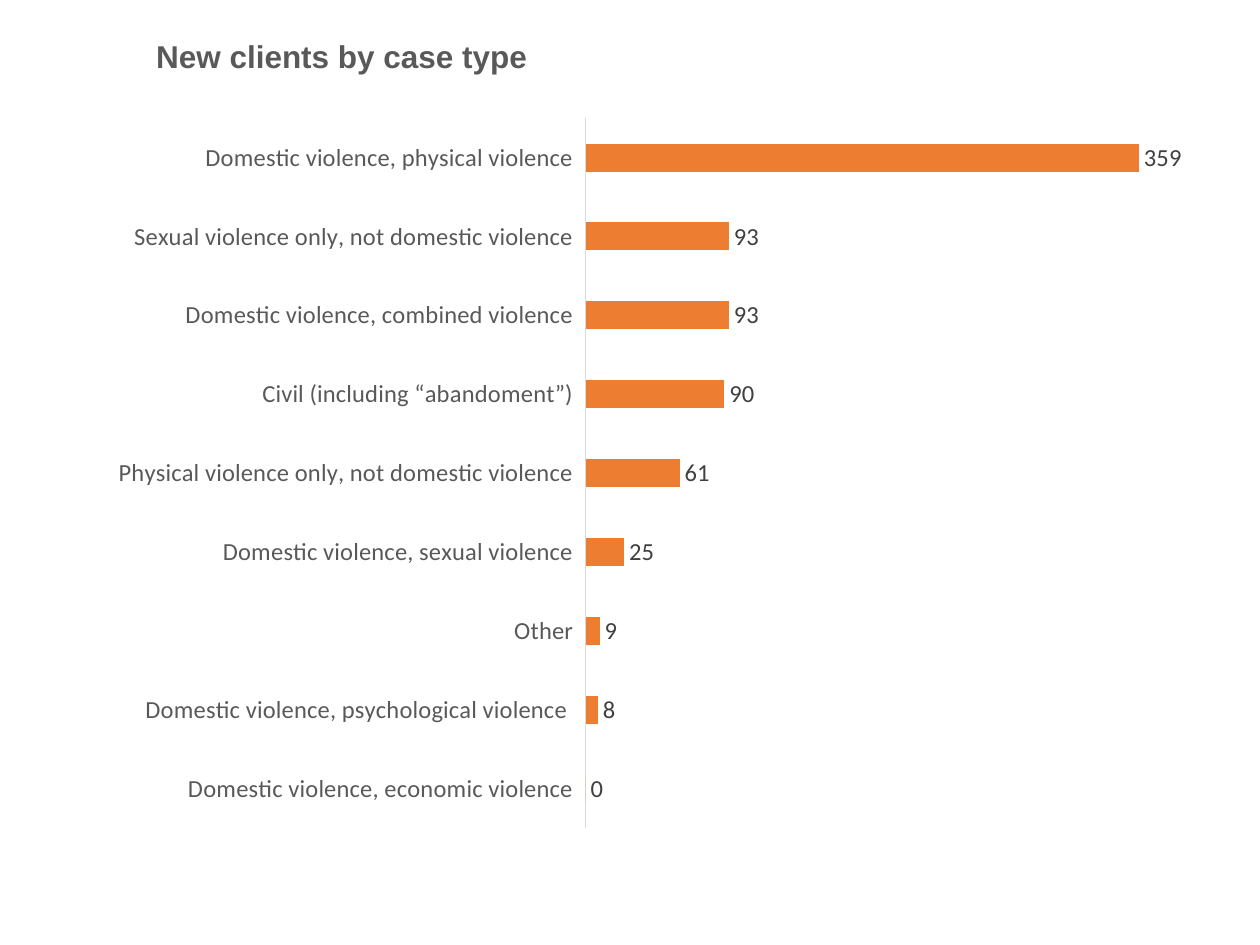
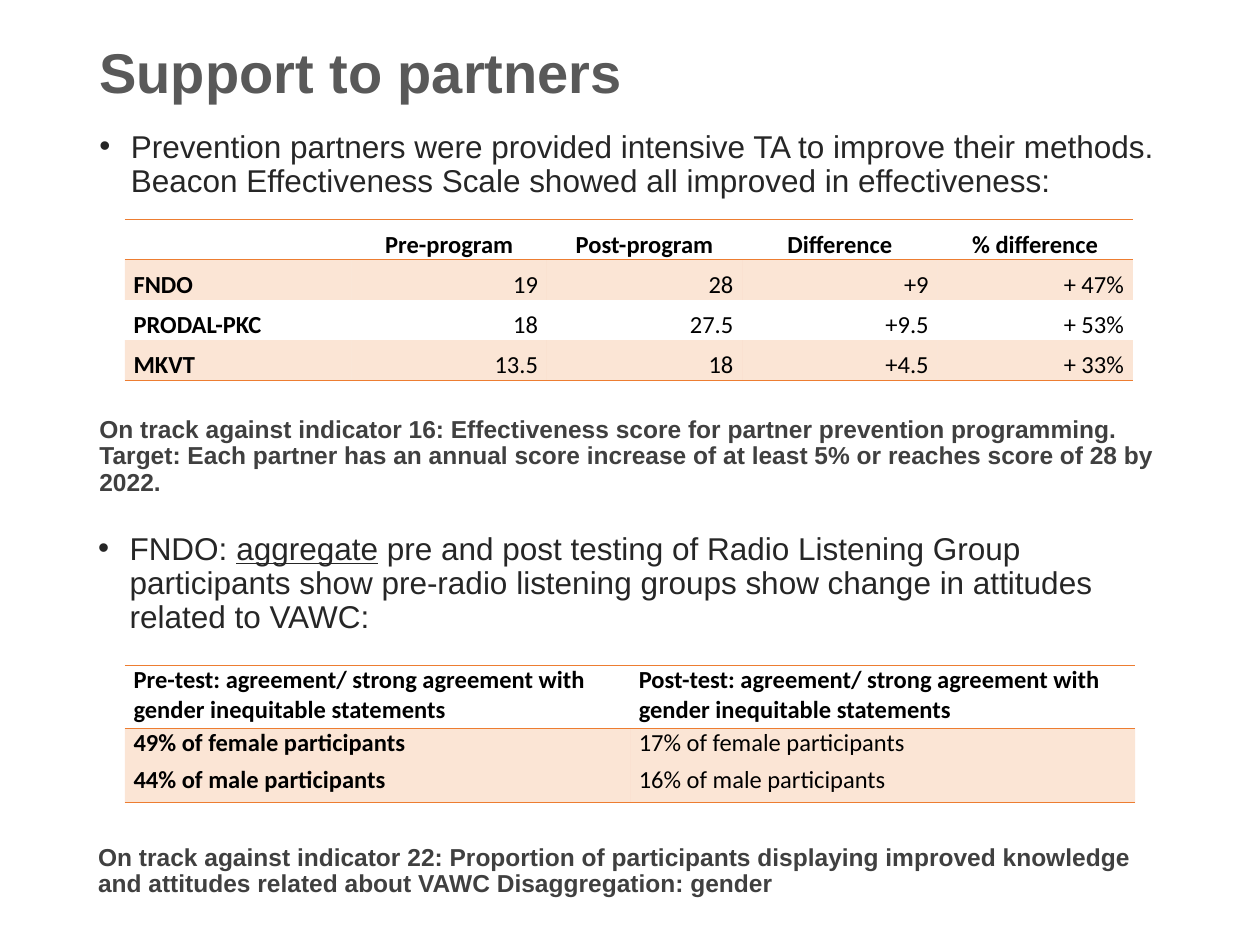
from dataclasses import dataclass

from lxml import etree
from pptx import Presentation
from pptx.chart.data import CategoryChartData
from pptx.dml.color import RGBColor
from pptx.enum.chart import XL_CHART_TYPE, XL_LABEL_POSITION, XL_TICK_LABEL_POSITION, XL_TICK_MARK
from pptx.enum.text import MSO_ANCHOR, PP_ALIGN
from pptx.oxml import parse_xml
from pptx.oxml.ns import nsdecls, qn
from pptx.util import Pt

BAR = XL_CHART_TYPE.BAR_CLUSTERED
OUTSIDE_END = XL_LABEL_POSITION.OUTSIDE_END
LOW = XL_TICK_LABEL_POSITION.LOW
NO_TICK = XL_TICK_MARK.NONE
TOP, MIDDLE, BOTTOM = MSO_ANCHOR.TOP, MSO_ANCHOR.MIDDLE, MSO_ANCHOR.BOTTOM
LEFT, CENTER, RIGHT, JUSTIFY = PP_ALIGN.LEFT, PP_ALIGN.CENTER, PP_ALIGN.RIGHT, PP_ALIGN.JUSTIFY

EMU_PER_PX = 9144  # 100 px to the inch
PAGE_SIZE = (1000, 750)
COLORS = {
    "title": "595959",
    "body": "262626",
    "note": "404040",
    "table": "000000",
    "accent": "ED7D31",
    "axis": "D9D9D9",
}
HEADING_FONT, DATA_FONT = "Arial", "Calibri"
DATA_SIZE = 14
PLAIN_TABLE_STYLE = "{2D5ABB26-0587-4C30-8999-92F81FD0307C}"
BULLET_INDENT = 25
CELL_INSET = 7
TINT_PERCENT = 20

CASES = {
    "Domestic violence, economic violence": 0,
    "Domestic violence, psychological violence ": 8,
    "Other": 9,
    "Domestic violence, sexual violence": 25,
    "Physical violence only, not domestic violence": 61,
    "Civil (including “abandoment”)": 90,
    "Domestic violence, combined violence": 93,
    "Sexual violence only, not domestic violence": 93,
    "Domestic violence, physical violence": 359,
}


@dataclass(frozen=True)
class Box:
    left: int
    top: int
    width: int
    height: int

    def emu(self) -> list[int]:
        return [px(side) for side in (self.left, self.top, self.width, self.height)]


@dataclass(frozen=True)
class Finding:
    """A bullet, and a note that stands a gap (in points) below it."""
    box: Box
    spans: tuple[str, ...]
    note: str
    gap: float


@dataclass(frozen=True)
class Grid:
    box: Box
    columns: tuple[int, ...]
    row_heights: tuple[int, ...]
    rows: tuple[tuple[str, ...], ...]
    header_align: int
    value_align: int
    anchor: int
    line_spacing: float = 1.0
    padding: int = 0


FINDINGS = (
    Finding(
        Box(69, 99, 862, 304),
        ("Prevention partners were provided intensive TA to improve their methods. "
         "Beacon Effectiveness Scale showed all improved in effectiveness:",),
        "On track against indicator 16: Effectiveness score for partner prevention "
        "programming. Target: Each partner has an annual score increase of at least 5% "
        "or reaches score of 28 by 2022.",
        gap=124.5,
    ),
    Finding(
        Box(68, 418, 862, 289),
        ("FNDO: ", "aggregate",
         " pre and post testing of Radio Listening Group participants show pre-radio "
         "listening groups show change in attitudes related to VAWC:"),
        "On track against indicator 22: Proportion of participants displaying improved "
        "knowledge and attitudes related about VAWC Disaggregation: gender",
        gap=120,
    ),
)
GRIDS = (
    Grid(
        Box(99, 174, 800, 128),
        columns=(180, 155, 155, 155, 155),
        row_heights=(32,) * 4,
        rows=(
            ("", "Pre-program", "Post-program", "Difference", "% difference"),
            ("FNDO", "19", "28", "+9", "+ 47%"),
            ("PRODAL-PKC", "18", "27.5", "+9.5", "+ 53%"),
            ("MKVT", "13.5", "18", "+4.5", "+ 33%"),
        ),
        header_align=CENTER, value_align=RIGHT, anchor=BOTTOM, line_spacing=1.07,
    ),
    Grid(
        Box(99, 528, 802, 109),
        columns=(401, 401),
        row_heights=(50, 59),
        rows=(
            ("Pre-test: agreement/ strong agreement with gender inequitable statements",
             "Post-test: agreement/ strong agreement with gender inequitable statements"),
            ("49% of female participants\n44% of male participants",
             "17% of female participants\n16% of male participants"),
        ),
        header_align=LEFT, value_align=JUSTIFY, anchor=TOP, padding=2,
    ),
)


def px(length: int) -> int:
    return length * EMU_PER_PX


def rgb(name: str) -> RGBColor:
    return RGBColor.from_string(COLORS[name])


def style_font(font, color: str, size: int, name: str = DATA_FONT, bold: bool = False) -> None:
    font.name, font.size, font.bold = name, Pt(size), bold
    font.color.rgb = rgb(color)


def write_para(frame, *spans: str, color: str, size: int, name: str = HEADING_FONT,
               bold: bool = False, align: int = LEFT, spacing: float = 0.9,
               before: float = 0, after: float = 0, bullet: bool = False) -> None:
    """Write spans into the next free paragraph, underlining every second one."""
    first = frame.paragraphs[0]
    para = frame.add_paragraph() if first.runs else first
    para.alignment, para.line_spacing = align, spacing
    para.space_before, para.space_after = Pt(before), Pt(after)
    for index, text in enumerate(spans):
        span = para.add_run()
        span.text = text
        style_font(span.font, color, size, name, bold)
        if index % 2:
            span.font.underline = True
    if bullet:
        properties = para._p.get_or_add_pPr()
        properties.set("marL", str(px(BULLET_INDENT)))
        properties.set("indent", str(-px(BULLET_INDENT)))
        etree.SubElement(properties, qn("a:buFont")).set("typeface", HEADING_FONT)
        etree.SubElement(properties, qn("a:buChar")).set("char", "•")


def add_text_frame(page, box: Box, anchor: int = TOP, wrap: bool = True):
    frame = page.shapes.add_textbox(*box.emu()).text_frame
    frame.word_wrap, frame.vertical_anchor = wrap, anchor
    return frame


def add_title(page, text: str, box: Box, size: int, spacing: float = 1.0) -> None:
    frame = add_text_frame(page, box, MIDDLE, wrap=False)
    write_para(frame, text, color="title", size=size, bold=True, spacing=spacing)


def add_finding(page, finding: Finding) -> None:
    frame = add_text_frame(page, finding.box)
    write_para(frame, *finding.spans, color="body", size=18, bullet=True)
    write_para(frame, finding.note, color="note", size=14, bold=True, before=finding.gap)


def tint(cell) -> None:
    cell.fill.solid()
    cell.fill.fore_color.rgb = rgb("accent")
    color = cell._tc.tcPr.find(f".//{qn('a:srgbClr')}")
    etree.SubElement(color, qn("a:alpha")).set("val", str(TINT_PERCENT * 1000))


def rule_cell(cell, *sides: str) -> None:
    """Draw accent rules on the given sides, T before B."""
    for index, side in enumerate(sides):
        cell._tc.get_or_add_tcPr().insert(index, parse_xml(
            f'<a:ln{side} {nsdecls("a")} w="{Pt(1)}"><a:solidFill>'
            f'<a:srgbClr val="{COLORS["accent"]}"/></a:solidFill></a:ln{side}>'))


def add_grid(page, grid: Grid) -> None:
    frame = page.shapes.add_table(len(grid.rows), len(grid.columns), *grid.box.emu())
    table = frame.table
    table.first_row = table.horz_banding = False
    next(frame.element.iter(qn("a:tableStyleId"))).text = PLAIN_TABLE_STYLE
    for column, width in zip(table.columns, grid.columns):
        column.width = px(width)
    for row, height in zip(table.rows, grid.row_heights):
        row.height = px(height)
    last = len(grid.rows) - 1
    for r, texts in enumerate(grid.rows):
        for c, text in enumerate(texts):
            cell = table.cell(r, c)
            cell.margin_left = cell.margin_right = px(CELL_INSET)
            cell.margin_top = cell.margin_bottom = 0
            cell.vertical_anchor = grid.anchor
            if r % 2:
                tint(cell)
            else:
                cell.fill.background()
            if r == 0:
                rule_cell(cell, "T", "B")
            elif r == last:
                rule_cell(cell, "B")
            align = grid.header_align if r == 0 else grid.value_align if c else LEFT
            for line in filter(None, text.split("\n")):
                write_para(cell.text_frame, line, color="table", size=DATA_SIZE,
                           name=DATA_FONT, bold=r == 0 or c == 0, align=align,
                           spacing=grid.line_spacing, before=grid.padding,
                           after=grid.padding)


def place_plot(chart, **fractions: float) -> None:
    """Fix the inner plot area, with x, y, w and h as fractions of the chart."""
    area = chart._chartSpace.chart.plotArea
    for layout in area.findall(qn("c:layout")):
        area.remove(layout)
    places = "".join(f'<c:{key} val="{value}"/>' for key, value in fractions.items())
    area.insert(0, parse_xml(
        f'<c:layout {nsdecls("c")}><c:manualLayout><c:layoutTarget val="inner"/>'
        f'<c:xMode val="edge"/><c:yMode val="edge"/>{places}</c:manualLayout></c:layout>'))


def add_case_chart(page, box: Box) -> None:
    data = CategoryChartData()
    data.categories = list(CASES)
    data.add_series("Series 1", list(CASES.values()))
    chart = page.shapes.add_chart(BAR, *box.emu(), data).chart
    chart.has_title = chart.has_legend = False
    style_font(chart.font, "table", 10)
    place_plot(chart, x=0.46, y=0.02, w=0.52, h=0.95)

    plot = chart.plots[0]
    plot.gap_width, plot.vary_by_categories = 182, False
    fill = plot.series[0].format.fill
    fill.solid()
    fill.fore_color.rgb = rgb("accent")
    plot.has_data_labels = True
    labels = plot.data_labels
    labels.show_value, labels.position = True, OUTSIDE_END
    style_font(labels.font, "note", DATA_SIZE)

    values = chart.value_axis
    values.visible = values.has_major_gridlines = False
    values.minimum_scale, values.maximum_scale = 0, 400
    categories = chart.category_axis
    categories.major_tick_mark = categories.minor_tick_mark = NO_TICK
    categories.tick_label_position = LOW
    style_font(categories.tick_labels.font, "title", DATA_SIZE)
    categories.format.line.color.rgb = rgb("axis")
    categories.format.line.width = Pt(0.75)


def main() -> None:
    deck = Presentation()
    deck.slide_width, deck.slide_height = map(px, PAGE_SIZE)
    blank = deck.slide_layouts[6]

    cases_page = deck.slides.add_slide(blank)
    add_title(cases_page, "New clients by case type", Box(114, 24, 338, 40), size=18)
    add_case_chart(cases_page, Box(32, 82, 941, 593))

    partners_page = deck.slides.add_slide(blank)
    add_title(partners_page, "Support to partners", Box(69, 2, 452, 116), size=32, spacing=0.9)
    for finding, grid in zip(FINDINGS, GRIDS):
        add_finding(partners_page, finding)
        add_grid(partners_page, grid)

    deck.save("out.pptx")


if __name__ == "__main__":
    main()
